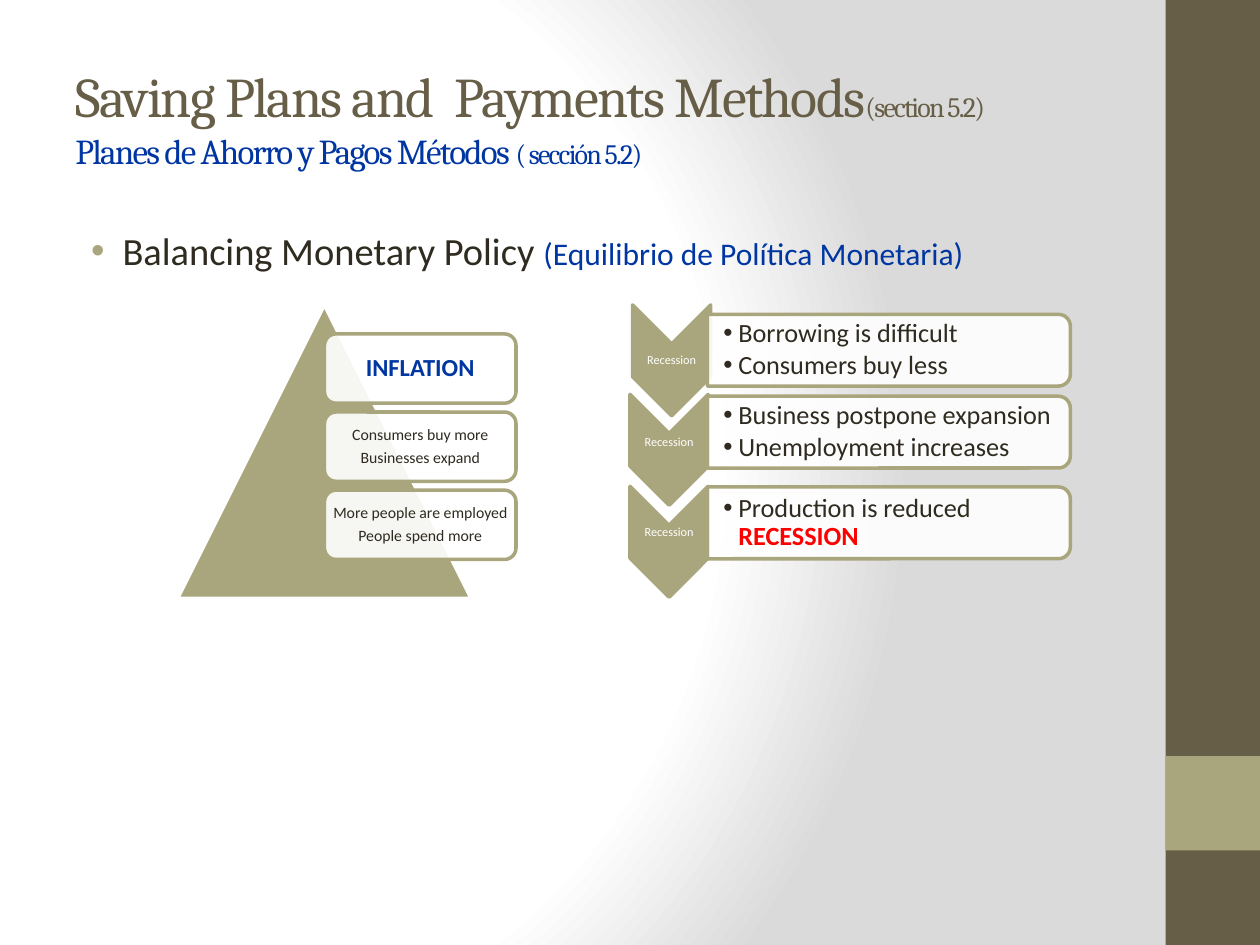
from collections import namedtuple
from copy import deepcopy

from lxml.etree import SubElement, fromstring
from pptx import Presentation
from pptx.dml.color import RGBColor
from pptx.enum.shapes import MSO_SHAPE as Preset
from pptx.enum.text import MSO_ANCHOR as Anchor, PP_ALIGN as Align
from pptx.oxml.ns import nsdecls, qn
from pptx.util import Inches, Pt

COLORS = {
    "olive": "675E47",
    "sage": "A9A57C",
    "ink": "2F2B20",
    "blue": "0036A2",
    "red": "FF0000",
    "white": "FFFFFF",
    "gray": "DADADA",
}
COLUMNS, ROWS = 100, 75  # grid cells of 0.1 inch
Box = namedtuple("Box", "x y w h")


def cells(count):
    return Inches(count / 10)


def within(box, x, y, w, h):
    """Box placed relative to the corner of another one."""
    return Box(box.x + x, box.y + y, w, h)


def rgb(color):
    return RGBColor.from_string(COLORS[color])


def draw(shapes, preset, box, fill, line=None, opacity=100, quarter_turn=False):
    """Preset shape that covers box, also when it is turned by 90 degrees."""
    x, y, w, h = box
    if quarter_turn:
        x, y, w, h = x + (w - h) / 2, y + (h - w) / 2, h, w
    shape = shapes.add_shape(preset, *map(cells, (x, y, w, h)))
    shape.shadow.inherit = False
    shape.rotation = 90 if quarter_turn else 0
    shape.fill.solid()
    shape.fill.fore_color.rgb = rgb(fill)
    if opacity < 100:
        tint = shape.element.spPr.find(qn("a:solidFill"))[0]
        SubElement(tint, qn("a:alpha"), val=str(opacity * 1000))
    if line:
        shape.line.color.rgb = rgb(line)
        shape.line.width = Pt(2)
    else:
        shape.line.fill.background()
    return shape


def add_bullet(paragraph, indent, color):
    props = paragraph._p.get_or_add_pPr()
    props.set("marL", str(cells(indent[0])))
    props.set("indent", str(cells(indent[1])))
    bullet_color = SubElement(props, qn("a:buClr"))
    SubElement(bullet_color, qn("a:srgbClr"), val=COLORS[color])
    SubElement(props, qn("a:buFont"), typeface="Arial")
    SubElement(props, qn("a:buChar"), char="•")


def write(shape, paragraphs, size, color="ink", font="Calibri", bold=False,
          align=Align.LEFT, anchor=Anchor.MIDDLE, insets=(0, 0, 0, 0),
          line_spacing=None, after=None, tracking=0, bullet=None,
          bullet_color="ink"):
    """Fill shape; a paragraph is a string or a list of (text, overrides)."""
    frame = shape.text_frame
    frame.word_wrap = True
    frame.vertical_anchor = anchor
    (frame.margin_left, frame.margin_top,
     frame.margin_right, frame.margin_bottom) = map(cells, insets)
    for index, runs in enumerate(paragraphs):
        paragraph = frame.add_paragraph() if index else frame.paragraphs[0]
        paragraph.alignment = align
        paragraph.line_spacing = line_spacing
        paragraph.space_after = after
        if bullet:
            add_bullet(paragraph, bullet, bullet_color)
        for text, own in [(runs, {})] if isinstance(runs, str) else runs:
            run = paragraph.add_run()
            run.text = text.rstrip("\n")
            run.font.name = font
            run.font.size = Pt(own.get("size", size))
            run.font.bold = own.get("bold", bold)
            run.font.color.rgb = rgb(own.get("color", color))
            run_props = run.font._element
            if tracking:
                run_props.set("spc", str(tracking * 100))
            if text.endswith("\n"):
                paragraph.add_line_break()
                paragraph._p[-1].append(deepcopy(run_props))


def add_text(shapes, box, paragraphs, **formatting):
    write(shapes.add_textbox(*map(cells, box)), paragraphs, **formatting)


def paint_background(slide):
    slide.background.fill.gradient()
    old = slide.element.find(".//" + qn("a:gradFill"))
    stops = "".join(
        f'<a:gs pos="{share * 1000}"><a:srgbClr val="{COLORS[color]}"/></a:gs>'
        for share, color in ((0, "white"), (75, "white"), (100, "gray")))
    old.getparent().replace(old, fromstring(
        f'<a:gradFill {nsdecls("a")} rotWithShape="1"><a:gsLst>{stops}</a:gsLst>'
        '<a:path path="circle"><a:fillToRect l="20000" t="50000" r="100000" '
        'b="50000"/></a:path></a:gradFill>'))


def side_band(shapes, box):
    draw(shapes, Preset.RECTANGLE, box, "olive")
    draw(shapes, Preset.RECTANGLE, within(box, 0, 60, box.w, box.w), "sage")


def heading(shapes, box):
    add_text(shapes, within(box, 0, 0, box.w, 12.5), [[
        ("Saving Plans and  Payments Methods", {}),
        ("(section 5.2)\n", {"size": 16}),
        ("Planes de Ahorro y Pagos Métodos ", {"size": 20, "color": "blue"}),
        ("( sección 5.2)", {"size": 16, "color": "blue"}),
    ]], size=32, color="olive", font="Cambria", tracking=-1, insets=(1, 0.5, 1, 0.5))
    add_text(shapes, within(box, 0, 14.5, box.w, 52.5), [[
        ("Balancing Monetary Policy ", {}),
        ("(Equilibrio de Política Monetaria)", {"size": 18, "color": "blue"}),
    ]], size=22, anchor=Anchor.TOP, insets=(1, 0.5, 1, 0.5),
        bullet=(3.75, -2.5), bullet_color="sage")


def recession_step(shapes, box, shift, effects):
    """One chevron with its effects; shift moves the chevron off the box corner."""
    draw(shapes, Preset.CHEVRON, within(box, *shift, 6.2, 8.8),
         "sage", line="sage", quarter_turn=True)
    add_text(shapes, within(box, shift[0], 2.35, 6.2, 2.6), ["Recession"],
             size=7, color="white", align=Align.CENTER, line_spacing=0.9)
    panel = within(box, 6.15, 0, box.w - 6.15, box.h)
    draw(shapes, Preset.ROUND_2_SAME_RECTANGLE, panel, "white",
         line="sage", opacity=90, quarter_turn=True)
    add_text(shapes, within(panel, 0.05, 0.25, panel.w - 0.3, 5.2), effects,
             size=15, line_spacing=0.9, after=Pt(2.25),
             insets=(1.2, 0.1, 0.1, 0.1), bullet=(1.2, -1.2))


def recession_chain(shapes, box):
    steps = (
        (0, (0.2, -0.75), ["Borrowing is difficult", "Consumers buy less"]),
        (6.5, (0, -0.15), ["Business postpone expansion", "Unemployment increases"]),
        (13.7, (0, -0.05), [[("Production is reduced\n", {}),
                             ("RECESSION", {"color": "red", "bold": True})]]),
    )
    for top, shift, effects in steps:
        recession_step(shapes, within(box, 0, top, box.w, 5.7), shift, effects)


def inflation_pyramid(shapes, box):
    draw(shapes, Preset.ISOSCELES_TRIANGLE, box, "sage", line="white")
    cards = (
        (["INFLATION"], {"size": 14, "color": "blue", "bold": True}),
        (["Consumers buy more", "Businesses expand"], {"size": 9}),
        (["More people are employed", "People spend more"], {"size": 9}),
    )
    for row, (lines, formatting) in enumerate(cards):
        card = draw(shapes, Preset.ROUNDED_RECTANGLE,
                    within(box, box.w / 2, 2.3 + 6.2 * row, 15.2, 5.5),
                    "white", line="sage", opacity=90)
        write(card, lines, align=Align.CENTER, line_spacing=0.9, after=Pt(3.15),
              insets=(0.4, 0.4, 0.4, 0.4), **formatting)


def main():
    deck = Presentation()
    deck.slide_width, deck.slide_height = cells(COLUMNS), cells(ROWS)
    slide = deck.slides.add_slide(deck.slide_layouts[6])
    paint_background(slide)
    side_band(slide.shapes, Box(92.5, 0, 7.5, ROWS))
    heading(slide.shapes, Box(5, 3, 83.3, 67))
    recession_chain(slide.shapes.add_group_shape().shapes, Box(50, 24.95, 34.95, 19.4))
    inflation_pyramid(slide.shapes.add_group_shape().shapes, Box(14.1, 24.2, 23.3, 23.3))
    deck.save("out.pptx")


if __name__ == "__main__":
    main()
